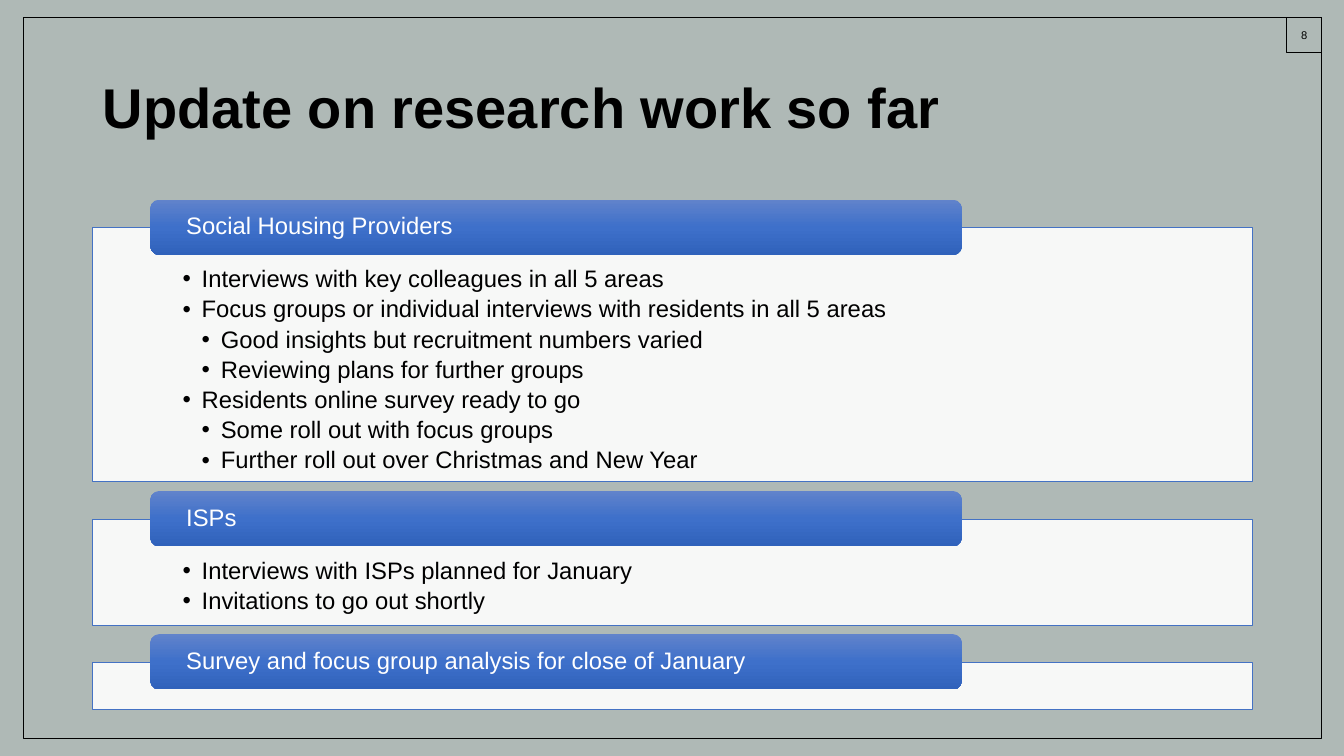
from dataclasses import dataclass

from lxml.etree import SubElement
from pptx import Presentation
from pptx.dml.color import RGBColor
from pptx.enum.shapes import MSO_SHAPE as Shape
from pptx.enum.text import MSO_ANCHOR as Anchor, MSO_AUTO_SIZE as AutoSize, PP_ALIGN as Align
from pptx.oxml.ns import qn
from pptx.util import Inches, Pt


@dataclass(frozen=True)
class Theme:
    font: str = "Arial"
    background: str = "AFB9B6"
    ink: str = "000000"
    panel: str = "FFFFFF"
    panel_line: str = "4472C4"
    heading: str = "FFFFFF"
    bar_stops: tuple = ((0, "6183CB"), (50, "3E70CA"), (100, "3062BB"))
    title_size: float = 40
    body_size: float = 17
    number_size: float = 8
    line_width: float = 0.5


THEME = Theme()
TITLE = "Update on research work so far"
SECTIONS = [  # heading, panel height, (level, text) items
    ("Social Housing Providers", 2.52, [
        (0, "Interviews with key colleagues in all 5 areas"),
        (0, "Focus groups or individual interviews with residents in all 5 areas"),
        (1, "Good insights but recruitment numbers varied"),
        (1, "Reviewing plans for further groups"),
        (0, "Residents online survey ready to go"),
        (1, "Some roll out with focus groups"),
        (1, "Further roll out over Christmas and New Year"),
    ]),
    ("ISPs", 1.05, [
        (0, "Interviews with ISPs planned for January"),
        (0, "Invitations to go out shortly"),
    ]),
    ("Survey and focus group analysis for close of January", 0.47, []),
]
LEFT, WIDTH = 0.92, 11.5
PANELS_TOP, PANEL_GAP = 2.26, 0.37
BAR_INDENT, BAR_RISE, BAR_WIDTH, BAR_HEIGHT = 0.57, 0.28, 8.05, 0.55
BULLET_STEP = 0.19


def set_values(target, values):
    for name, value in values.items():
        setattr(target, name, value)


def place(shape, box):
    set_values(shape, dict(zip(("left", "top", "width", "height"), map(Inches, box))))


def add_box(slide, kind, box):
    shape = slide.shapes.add_shape(kind, *map(Inches, box))
    shape.shadow.inherit = False
    shape.fill.background()
    shape.line.fill.background()
    return shape


def set_line(shape, color):
    shape.line.color.rgb = RGBColor.from_string(color)
    shape.line.width = Pt(THEME.line_width)


def set_frame(shape, anchor, insets):
    names = ("margin_left", "margin_top", "margin_right", "margin_bottom")
    set_values(shape.text_frame, {
        "word_wrap": True, "auto_size": AutoSize.NONE, "vertical_anchor": anchor,
        **dict(zip(names, map(Inches, insets)))})


def write(paragraph, text, size, color, bold=False, **layout):
    set_values(paragraph, {"alignment": Align.LEFT, "line_spacing": 0.9,
                           "space_before": Pt(0), "space_after": Pt(0), **layout})
    run = paragraph.add_run()
    run.text = text
    set_values(run.font, {"name": THEME.font, "size": Pt(size), "bold": bold})
    run.font.color.rgb = RGBColor.from_string(color)


def set_bullet(paragraph, level):
    properties = paragraph._p.get_or_add_pPr()
    properties.set("marL", str(Inches(BULLET_STEP * (level + 1))))
    properties.set("indent", str(-Inches(BULLET_STEP)))
    SubElement(properties, qn("a:buFont"), typeface=THEME.font)
    SubElement(properties, qn("a:buChar"), char="•")


def fill_gradient(shape, stops):
    shape.fill.gradient()
    gradient = shape._element.spPr.find(qn("a:gradFill"))
    for child in list(gradient):
        gradient.remove(child)
    stop_list = SubElement(gradient, qn("a:gsLst"))
    for position, color in stops:
        stop = SubElement(stop_list, qn("a:gs"), pos=str(position * 1000))
        SubElement(stop, qn("a:srgbClr"), val=color)
    SubElement(gradient, qn("a:lin"), ang=str(90 * 60000), scaled="0")


def build_frame(slide, box, number):
    """Page border with the slide number in its top right corner."""
    left, top, width, _ = box
    side = 0.35
    number_box = add_box(slide, Shape.RECTANGLE, (left + width - side, top, side, side))
    set_frame(number_box, Anchor.MIDDLE, (0, 0, 0, 0))
    write(number_box.text_frame.paragraphs[0], number, THEME.number_size, THEME.ink,
          alignment=Align.CENTER, line_spacing=1.0)
    for shape in (number_box, add_box(slide, Shape.RECTANGLE, box)):
        set_line(shape, THEME.ink)


def build_title(slide, box):
    title = slide.shapes.title
    place(title, box)
    set_frame(title, Anchor.MIDDLE, (0.1, 0.05, 0.1, 0.05))
    write(title.text_frame.paragraphs[0], TITLE, THEME.title_size, THEME.ink, bold=True)


def build_panel(panel, box, items):
    """White panel, with its bulleted list if there is one."""
    place(panel, box)
    panel.fill.solid()
    panel.fill.fore_color.rgb = RGBColor.from_string(THEME.panel)
    color = panel._element.spPr.find(qn("a:solidFill"))[0]
    SubElement(color, qn("a:alpha"), val="90000")
    set_line(panel, THEME.panel_line)
    set_frame(panel, Anchor.TOP, (0.89, 0.39, 0.89, 0.13))
    frame = panel.text_frame
    for index, (level, text) in enumerate(items):
        paragraph = frame.add_paragraph() if index else frame.paragraphs[0]
        write(paragraph, text, THEME.body_size, THEME.ink, level=level, space_after=Pt(3.2))
        set_bullet(paragraph, level)


def build_heading(slide, box, text):
    bar = add_box(slide, Shape.ROUNDED_RECTANGLE, box)
    fill_gradient(bar, THEME.bar_stops)
    set_frame(bar, Anchor.MIDDLE, (0.33, 0, 0.33, 0))
    write(bar.text_frame.paragraphs[0], text, THEME.body_size, THEME.heading)


def build_sections(slide, left, top, width):
    """Stack of panels, each with a heading bar across its top edge."""
    bodies = [shape for shape in slide.placeholders if shape.placeholder_format.idx]
    for heading, height, items in SECTIONS:
        box = (left, top, width, height)
        panel = bodies.pop(0) if items else add_box(slide, Shape.RECTANGLE, box)
        build_panel(panel, box, items)
        build_heading(slide, (left + BAR_INDENT, top - BAR_RISE, BAR_WIDTH, BAR_HEIGHT), heading)
        top += height + PANEL_GAP


def main():
    presentation = Presentation()
    set_values(presentation, {"slide_width": Inches(13.33), "slide_height": Inches(7.5)})
    two_content = presentation.slide_layouts[3]
    slide = presentation.slides.add_slide(two_content)
    slide.background.fill.solid()
    slide.background.fill.fore_color.rgb = RGBColor.from_string(THEME.background)

    build_frame(slide, (0.23, 0.17, 12.88, 7.16), "8")
    build_title(slide, (LEFT, 0.37, WIDTH, 1.45))
    build_sections(slide, LEFT, PANELS_TOP, WIDTH)
    presentation.save("out.pptx")


if __name__ == "__main__":
    main()
